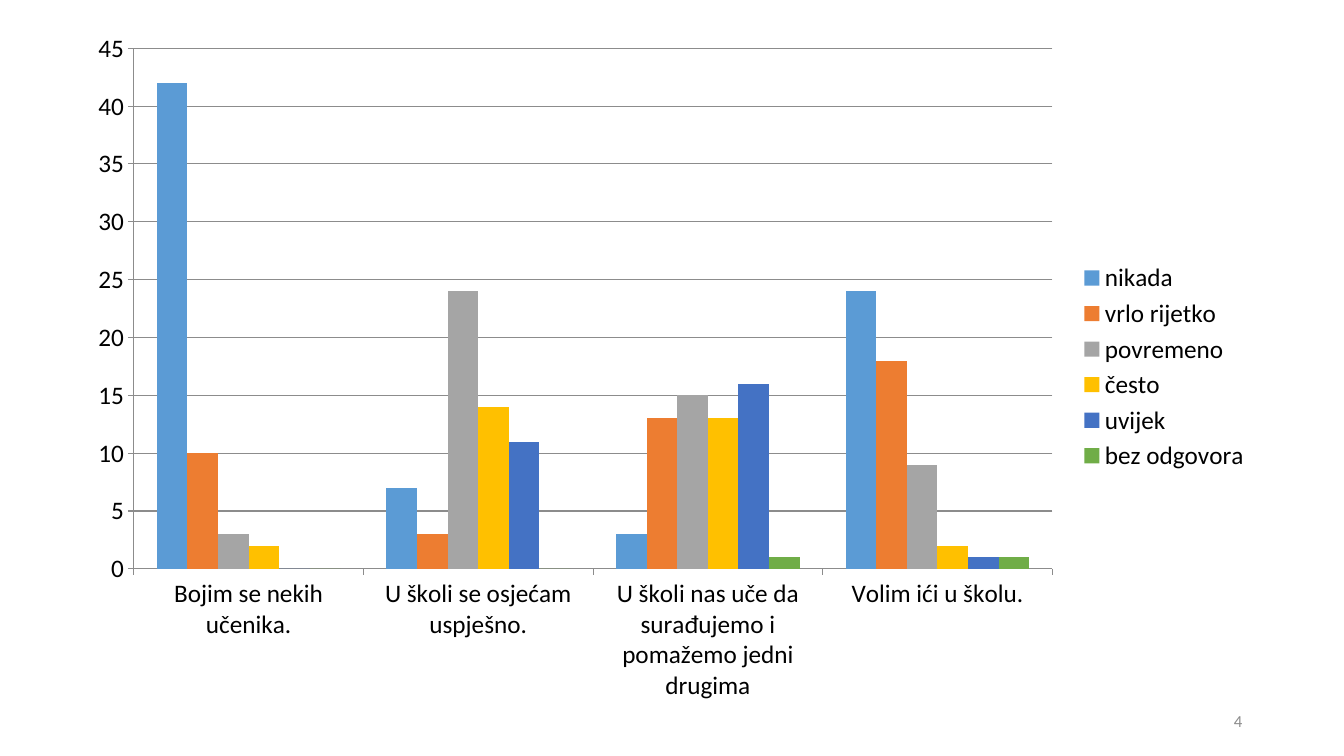
import pptx
import pptx.chart.data
import pptx.dml.color
import pptx.enum.chart
import pptx.enum.text
import pptx.util

Inches = pptx.util.Inches
FONT = "Calibri"
COLORS = {
    "text": "000000",
    "axis": "8C8C8C",
    "nikada": "5B9BD5",
    "vrlo rijetko": "ED7D31",
    "povremeno": "A5A5A5",
    "često": "FFC000",
    "uvijek": "4472C4",
    "bez odgovora": "70AD47",
}
STATEMENTS = [
    "Bojim se nekih učenika.",
    "U školi se osjećam uspješno.",
    "U školi nas uče da surađujemo i pomažemo jedni drugima",
    "Volim ići u školu.",
]
ANSWERS = {
    "nikada": (42, 7, 3, 24),
    "vrlo rijetko": (10, 3, 13, 18),
    "povremeno": (3, 24, 15, 9),
    "često": (2, 14, 13, 2),
    "uvijek": (0, 11, 16, 1),
    "bez odgovora": (0, 0, 1, 1),
}


def color(name):
    """Return the named colour."""
    return pptx.dml.color.RGBColor.from_string(COLORS[name])


def format_font(font, size, tone):
    """Set typeface, size and colour of a font."""
    font.name = FONT
    font.size = pptx.util.Pt(size)
    font.color.rgb = color(tone)


def format_line(line):
    """Give an axis or grid line its thin grey stroke."""
    line.color.rgb = color("axis")
    line.width = pptx.util.Pt(0.75)


def add_text(page, bounds, text, *, size, tone, align):
    """Add a single-line text box centred vertically in its bounds."""
    box = page.shapes.add_textbox(*map(Inches, bounds))
    frame = box.text_frame
    frame.word_wrap = True
    frame.vertical_anchor = pptx.enum.text.MSO_ANCHOR.MIDDLE
    para = frame.paragraphs[0]
    para.alignment = align
    span = para.add_run()
    span.text = text
    format_font(span.font, size, tone)


def add_answer_chart(page, bounds):
    """Add the clustered columns of answers per statement."""
    data = pptx.chart.data.CategoryChartData()
    data.categories = STATEMENTS
    for answer, counts in ANSWERS.items():
        data.add_series(answer, counts)
    kind = pptx.enum.chart.XL_CHART_TYPE.COLUMN_CLUSTERED
    chart = page.shapes.add_chart(kind, *map(Inches, bounds), data).chart
    format_font(chart.font, 18, "text")
    chart.has_title = False
    chart.has_legend = True
    chart.legend.position = pptx.enum.chart.XL_LEGEND_POSITION.RIGHT
    chart.legend.include_in_layout = False

    plot = chart.plots[0]
    plot.vary_by_categories = False
    plot.gap_width = 150
    plot.overlap = 0
    for series in plot.series:
        series.format.fill.solid()
        series.format.fill.fore_color.rgb = color(series.name)

    for axis in (chart.category_axis, chart.value_axis):
        axis.major_tick_mark = pptx.enum.chart.XL_TICK_MARK.OUTSIDE
        format_line(axis.format.line)
    scale = chart.value_axis
    scale.minimum_scale, scale.maximum_scale, scale.major_unit = 0, 45, 5
    scale.has_major_gridlines = True
    format_line(scale.major_gridlines.format.line)


def add_page_number(page, bounds):
    """Add the page number at the lower right."""
    add_text(page, bounds, "4", size=12, tone="axis",
             align=pptx.enum.text.PP_ALIGN.RIGHT)


def main():
    """Build and save the deck."""
    deck = pptx.Presentation()
    deck.slide_width, deck.slide_height = Inches(13.33), Inches(7.5)
    page = deck.slides.add_slide(deck.slide_layouts[6])
    add_answer_chart(page, (0.74, 0.19, 11.76, 6.9))
    add_page_number(page, (9.42, 6.95, 3, 0.4))
    deck.save("out.pptx")


if __name__ == "__main__":
    main()
